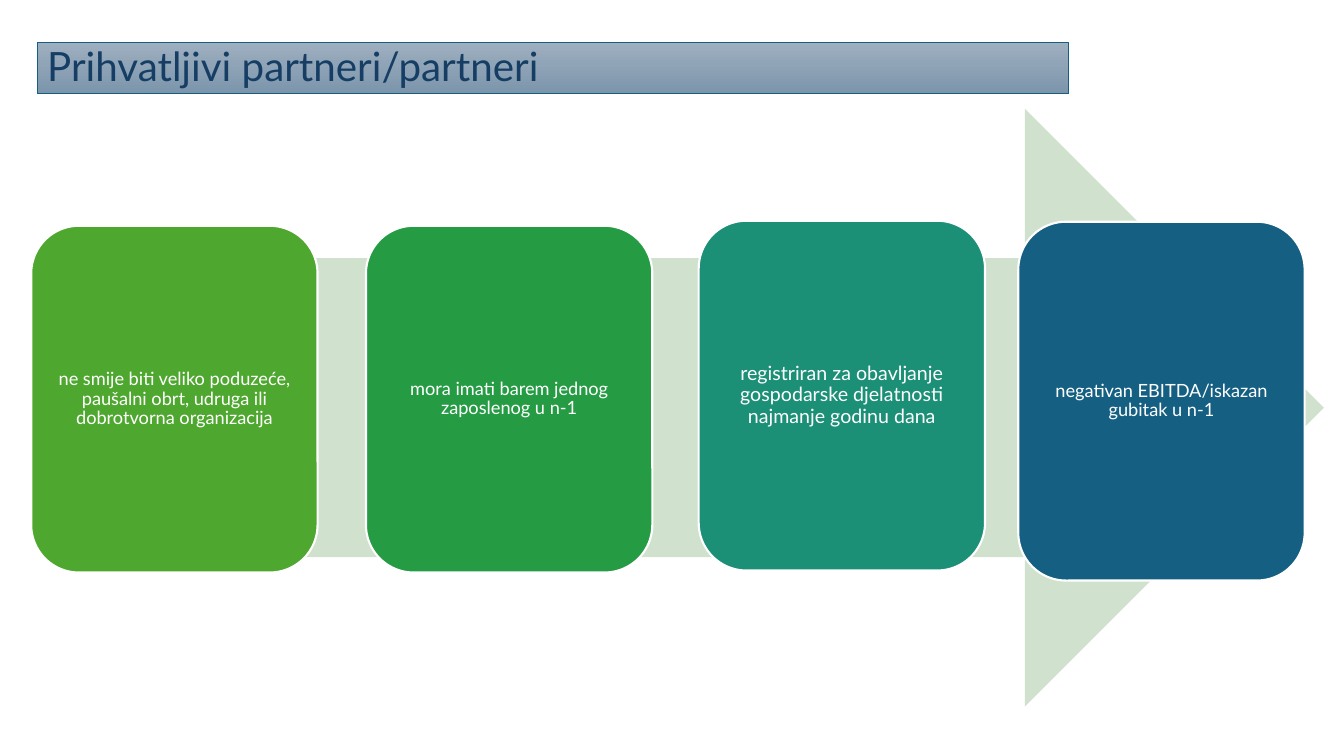
from pptx import Presentation
from pptx import util as u
from pptx.dml.color import RGBColor
from pptx.enum import shapes, text

FONT = "Lato"
KIND = shapes.MSO_SHAPE
ALIGN = text.PP_ALIGN

# left, top, height, fill, text size, wording
CARDS = [
    (0.31, 2.24, 3.44, "4EA72E", 13,
     "ne smije biti veliko poduzeće, paušalni obrt, udruga ili dobrotvorna organizacija"),
    (3.63, 2.24, 3.44, "259C44", 13, "mora imati barem jednog zaposlenog u n-1"),
    (6.93, 2.19, 3.47, "1C8F77", 14,
     "registriran za obavljanje gospodarske djelatnosti najmanje godinu dana"),
    (10.1, 2.2, 3.56, "156082", 13, "negativan EBITDA/iskazan gubitak u n-1"),
]
CARD_W = 2.84


def rgb(code):
    return RGBColor.from_string(code)


def add_box(slide, kind, box, fill=None, line=None, width=1):
    shape = slide.shapes.add_shape(kind, *map(u.Inches, box))
    shape.shadow.inherit = False
    if fill:
        shape.fill.solid()
        shape.fill.fore_color.rgb = rgb(fill)
    if line:
        shape.line.color.rgb = rgb(line)
        shape.line.width = u.Pt(width)
    else:
        shape.line.fill.background()
    return shape


def write(shape, words, size, color, align):
    frame = shape.text_frame
    frame.word_wrap = True
    frame.vertical_anchor = text.MSO_ANCHOR.MIDDLE
    par = frame.paragraphs[0]
    par.text = words
    par.alignment = align
    par.line_spacing = 0.9
    par.font.name = FONT
    par.font.size = u.Pt(size)
    par.font.color.rgb = rgb(color)
    return frame


def add_title(slide, box):
    bar = add_box(slide, KIND.RECTANGLE, box, line="156082")
    bar.fill.gradient()
    bar.fill.gradient_angle = 270
    for stop, code in zip(bar.fill.gradient_stops, ("9EAFBF", "7C95AB")):
        stop.color.rgb = rgb(code)
    write(bar, "Prihvatljivi partneri/partneri", 28.8, "163E64", ALIGN.LEFT)


def add_card(slide, box, fill, size, words):
    card = add_box(slide, KIND.ROUNDED_RECTANGLE, box, fill, "FFFFFF", 1.5)
    frame = write(card, words, size, "FFFFFF", ALIGN.CENTER)
    pad = u.Inches(0.05)
    frame.margin_left = frame.margin_right = pad
    frame.margin_top = frame.margin_bottom = pad


def add_flow(slide, box):
    """Draw the wide arrow with the row of cards on it."""
    add_box(slide, KIND.RIGHT_ARROW, box, "D0E1CD")
    x, y = box[:2]
    for left, top, height, fill, size, words in CARDS:
        place = (x + left - 0.71, y + top - 1.08, CARD_W, height)
        add_card(slide, place, fill, size, words)


def main():
    deck = Presentation()
    deck.slide_width = u.Inches(13.33)
    deck.slide_height = u.Inches(7.5)
    slide = deck.slides.add_slide(deck.slide_layouts[6])
    add_title(slide, (0.37, 0.42, 10.23, 0.51))
    add_flow(slide, (0.71, 1.08, 12.42, 5.93))
    deck.save("out.pptx")


if __name__ == "__main__":
    main()
